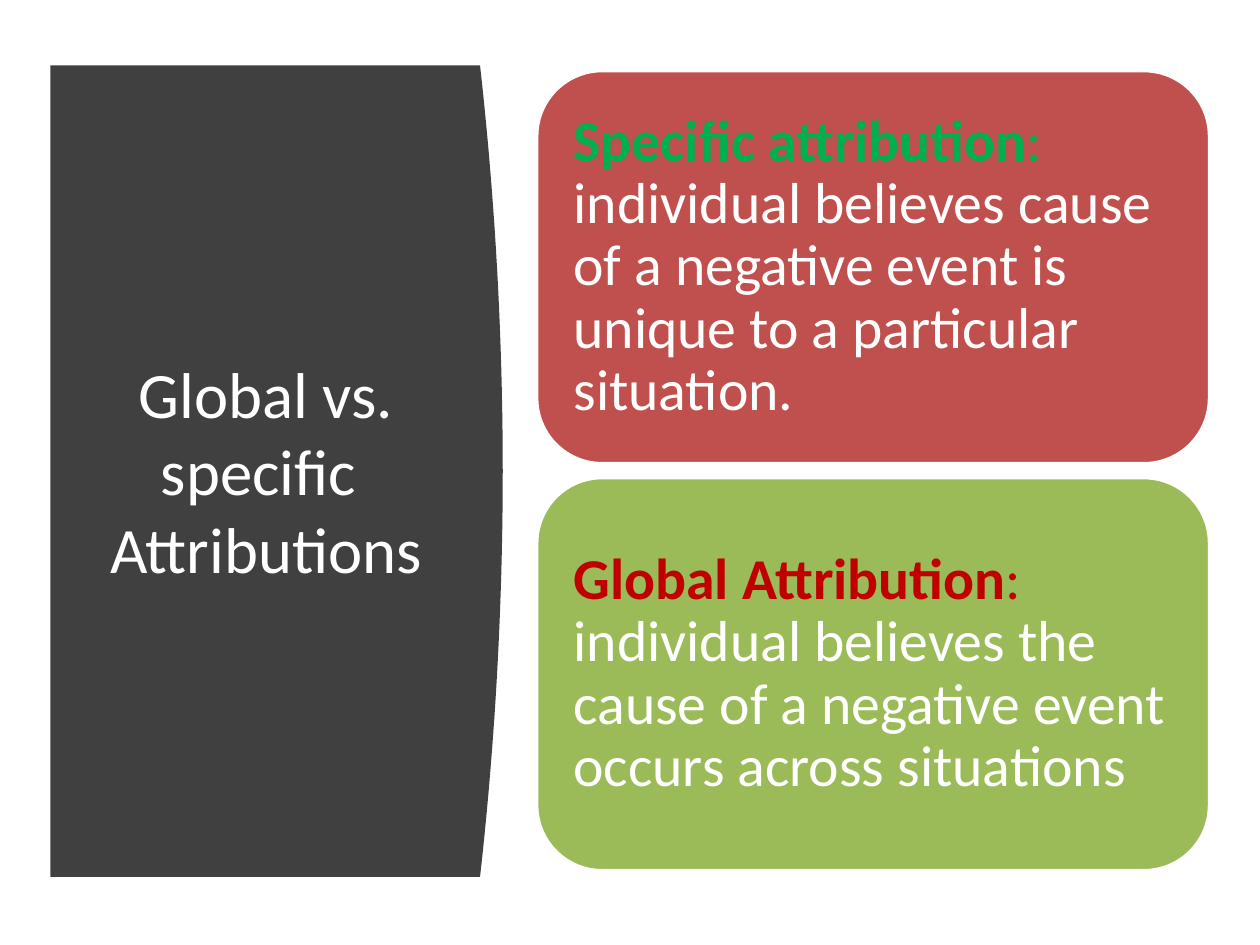
"""Build the slide that sets specific against global attributions."""
from pptx import Presentation
from pptx.dml.color import RGBColor
from pptx.enum.shapes import MSO_SHAPE
from pptx.enum.text import MSO_ANCHOR, PP_ALIGN
from pptx.util import Inches, Pt

ROUND = MSO_SHAPE.ROUNDED_RECTANGLE
MIDDLE = MSO_ANCHOR.MIDDLE
LEFT, CENTER = PP_ALIGN.LEFT, PP_ALIGN.CENTER

HEX = {"dark": "404040", "white": "FFFFFF", "brick": "C0504D",
       "olive": "9BBB59", "green": "00B050", "red": "C00000"}
INK = {name: RGBColor.from_string(code) for name, code in HEX.items()}

deck = Presentation()
deck.slide_width, deck.slide_height = Inches(10), Inches(7.5)
wide, high = deck.slide_width / 100, deck.slide_height / 100
slide = deck.slides.add_slide(deck.slide_layouts[6])
shapes = slide.shapes


def write(shape, runs, size, align=LEFT, inset=0.1, lead=1.0):
    frame = shape.text_frame
    frame.word_wrap = True
    frame.vertical_anchor = MIDDLE
    frame.margin_left = frame.margin_right = Inches(inset)
    frame.margin_top = frame.margin_bottom = Inches(inset)
    para = frame.paragraphs[0]
    para.alignment, para.line_spacing = align, lead
    for words, ink, bold in runs:
        para.add_run().text = words
        font = para.runs[-1].font
        font.name, font.size, font.bold = "Calibri", Pt(size), bold
        font.color.rgb = INK[ink]


west, edge, bulge = 4 * wide, 38.1 * wide, 1.8 * wide
top, base = 6.93 * high, 92.8 * high
steps = 40
curve = [(edge + bulge * (1 - (2 * i / steps - 1) ** 2),
          top + (base - top) * i / steps) for i in range(steps + 1)]
build = shapes.build_freeform(int(west), int(top))
build.add_line_segments([(int(x), int(y)) for x, y in curve + [(west, base)]])
panel = build.convert_to_shape()
panel.shadow.inherit = False
panel.fill.solid()
panel.fill.fore_color.rgb = INK["dark"]
panel.line.fill.background()

title = shapes.add_textbox(int(7.1 * wide), int(14.8 * high),
                           int(28 * wide), int(69.87 * high))
write(title, [("Global vs. specific  Attributions", "white", False)],
      37, align=CENTER)

cards = [
    ("brick", "green", "Specific attribution",
     "individual believes cause of a negative event is unique to a "
     "particular situation."),
    ("olive", "red", "Global Attribution",
     "individual believes the cause of a negative event occurs across "
     "situations"),
]
for row, (fill, ink, term, sense) in enumerate(cards):
    card = shapes.add_shape(ROUND, int(42.6 * wide),
                            int((7.47 + 43.07 * row) * high),
                            int(53.4 * wide), int(41.6 * high))
    card.shadow.inherit = False
    card.fill.solid()
    card.fill.fore_color.rgb = INK[fill]
    card.line.color.rgb = INK["white"]
    card.line.width = Pt(2)
    write(card, [(term, ink, True), (": ", ink, False),
                 (sense, "white", False)], 33, inset=0.14, lead=0.9)

deck.save("out.pptx")
